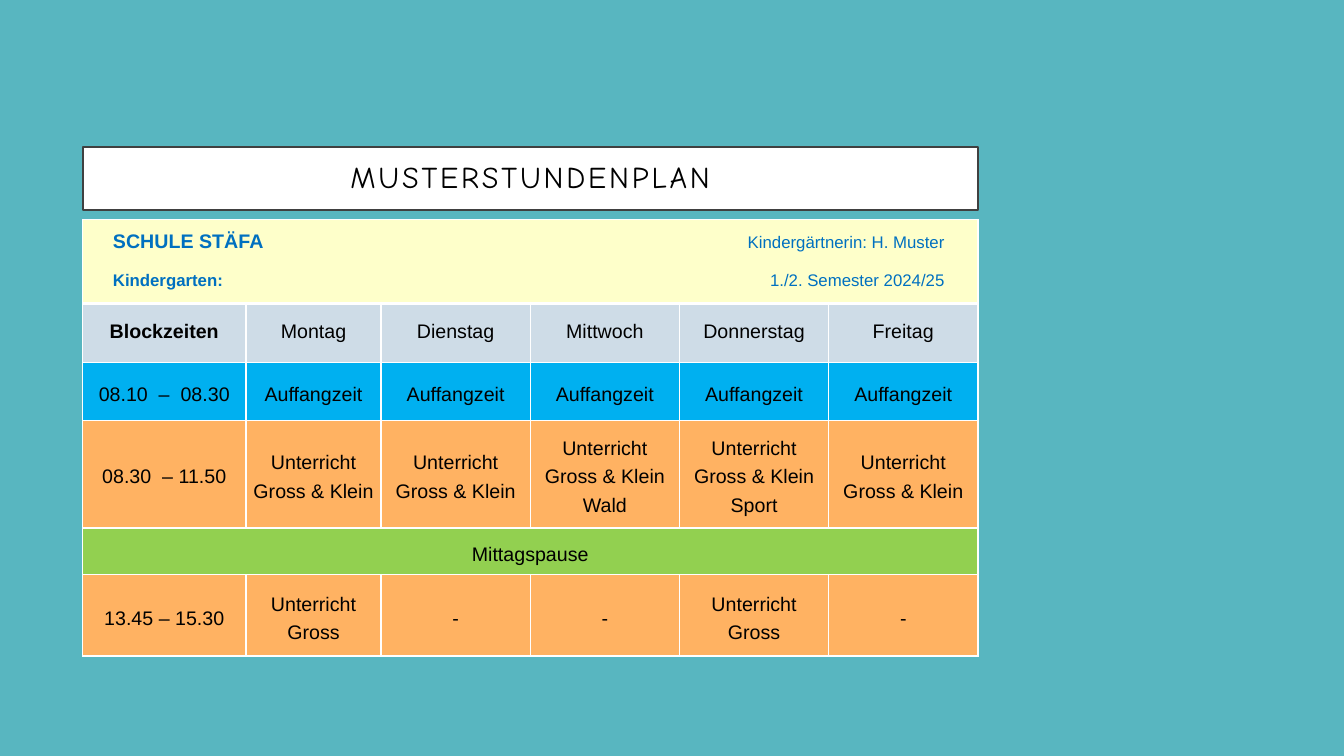
from lxml import etree
from pptx import Presentation
from pptx import util as u
from pptx.dml.color import RGBColor
from pptx.enum import shapes, text
from pptx.oxml import ns

# Content
TITLE = "MUSTERSTUNDENPLAN"
HEADING = [("SCHULE STÄFA", "Kindergärtnerin: H. Muster", 14),
           ("Kindergarten:", "1./2. Semester 2024/25", 12)]
LESSON = "Unterricht\nGross & Klein"
BIG = "Unterricht\nGross"
# One entry per row below the heading: height, fill, line spacing, cell texts
ROWS = [
    (0.59, "CEDCE7", 14, ["Blockzeiten", "Montag", "Dienstag", "Mittwoch",
                          "Donnerstag", "Freitag"]),
    (0.57, "00B0F0", 20, ["08.10  –  08.30"] + ["Auffangzeit"] * 5),
    (1.07, "FFB262", 20, ["08.30  – 11.50", LESSON, LESSON, LESSON + "\nWald",
                          LESSON + "\nSport", LESSON]),
    (0.46, "92D050", 20, ["Mittagspause"]),
    (0.81, "FFB262", 20, ["13.45 – 15.30", BIG, "-", "-", BIG, "-"]),
]
HEADING_HEIGHT = 0.83
COLUMNS = [1.62, 1.34] + [1.48] * 4
LEFT, WIDTH = 0.82, sum(COLUMNS)


def color(code):
    return RGBColor.from_string(code)


def style_cell(cell, fill, bottom=1):
    cell.fill.solid()
    cell.fill.fore_color.rgb = color(fill)
    cell.margin_left = cell.margin_right = u.Inches(0.05)
    cell.margin_top = cell.margin_bottom = 0
    cell.vertical_anchor = text.MSO_ANCHOR.MIDDLE
    properties = cell._tc.get_or_add_tcPr()
    for index, side in enumerate("LRTB"):
        width = bottom if side == "B" else 1
        line = etree.Element(ns.qn("a:ln" + side), w=str(u.Pt(width)))
        solid = etree.SubElement(line, ns.qn("a:solidFill"))
        etree.SubElement(solid, ns.qn("a:srgbClr"), val="FFFFFF")
        properties.insert(index, line)


def style_font(font, size, code, bold=False, name="Arial"):
    font.name, font.size, font.bold = name, u.Pt(size), bold
    font.color.rgb = color(code)


# Page
deck = Presentation()
deck.slide_width, deck.slide_height = u.Inches(13.33), u.Inches(7.5)
page = deck.slides.add_slide(deck.slide_layouts[6])
page.background.fill.solid()
page.background.fill.fore_color.rgb = color("58B6C0")

# Title box
box = page.shapes.add_shape(shapes.MSO_SHAPE.RECTANGLE, u.Inches(LEFT), u.Inches(1.46),
                            u.Inches(WIDTH), u.Inches(0.62))
box.shadow.inherit = False
box.fill.solid()
box.fill.fore_color.rgb = color("FFFFFF")
box.line.color.rgb = color("404040")
box.line.width = u.Pt(1.5)
box.text_frame.vertical_anchor = text.MSO_ANCHOR.MIDDLE
para = box.text_frame.paragraphs[0]
para.alignment = text.PP_ALIGN.CENTER
para.line_spacing = 0.9
span = para.add_run()
span.text = TITLE
style_font(span.font, 21.6, "000000", name="Comic Neue")
span._r.get_or_add_rPr().set("spc", "200")

# Timetable grid
heights = [HEADING_HEIGHT] + [row[0] for row in ROWS]
table = page.shapes.add_table(len(heights), len(COLUMNS), u.Inches(LEFT), u.Inches(2.18),
                              u.Inches(WIDTH), u.Inches(sum(heights))).table
table.first_row = table.horz_banding = False
for column, width in zip(table.columns, COLUMNS):
    column.width = u.Inches(width)
for row, height in zip(table.rows, heights):
    row.height = u.Inches(height)

# Heading row: school on the left, teacher and term at a right tab
for cell in table.rows[0].cells:
    style_cell(cell, "FEFFCA", bottom=3)
heading = table.cell(0, 0)
heading.merge(table.cell(0, len(COLUMNS) - 1))
heading.vertical_anchor = text.MSO_ANCHOR.TOP
heading.margin_left, heading.margin_top = u.Inches(0.3), u.Inches(0.11)
for index, (label, detail, size) in enumerate(HEADING):
    frame = heading.text_frame
    para = frame.add_paragraph() if index else frame.paragraphs[0]
    if index:
        para.space_before = u.Pt(13)
    tabs = etree.SubElement(para._p.get_or_add_pPr(), ns.qn("a:tabLst"))
    etree.SubElement(tabs, ns.qn("a:tab"), pos=str(u.Inches(8.25)), algn="r")
    for words, points, bold in ((label, size, True), ("\t" + detail, 12, False)):
        span = para.add_run()
        span.text = words
        style_font(span.font, points, "0070C0", bold)

# Lesson rows
for number, (height, fill, spacing, texts) in enumerate(ROWS, start=1):
    for cell in table.rows[number].cells:
        style_cell(cell, fill)
    if len(texts) == 1:
        table.cell(number, 0).merge(table.cell(number, len(COLUMNS) - 1))
    for position, words in enumerate(texts):
        frame = table.cell(number, position).text_frame
        frame.text = words
        for para in frame.paragraphs:
            para.alignment = text.PP_ALIGN.CENTER
            para.line_spacing = u.Pt(spacing)
            style_font(para.font, 14, "000000", bold=words == "Blockzeiten")

deck.save("out.pptx")
